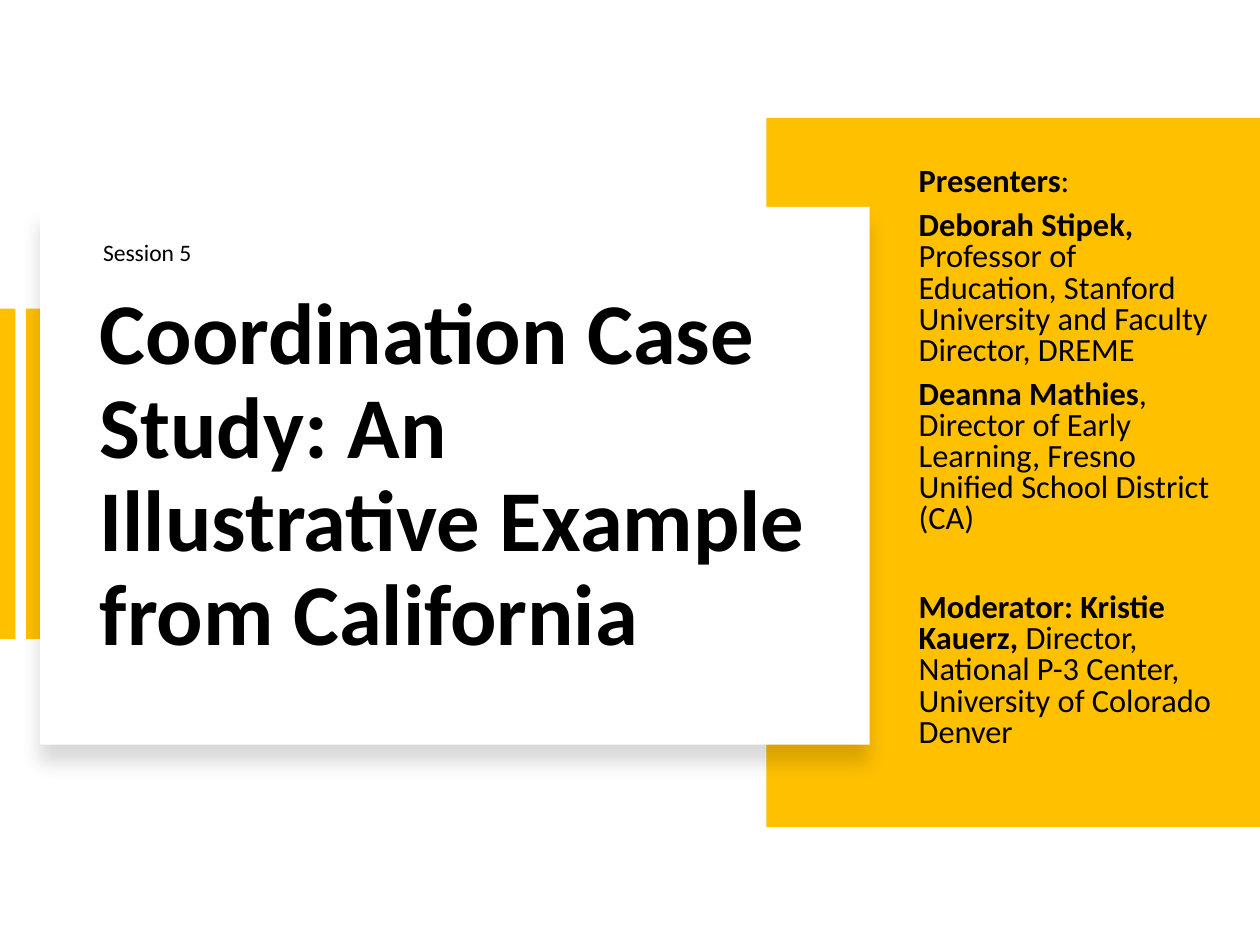
import pptx
import pptx.util
import pptx.dml.color
import pptx.enum.shapes
import pptx.enum.text
import pptx.oxml

Pt = pptx.util.Pt
ANCHOR = pptx.enum.text.MSO_ANCHOR
GOLD, WHITE, BLACK = "FFC000", "FFFFFF", "000000"
FONT = "Calibri"

# Each presenter paragraph: space before, bold part, regular part
PEOPLE = [
    (7.5, "Presenters", ":"),
    (7.5, "Deborah Stipek, ",
     "Professor of Education, Stanford University and Faculty Director, DREME"),
    (7.5, "Deanna Mathies",
     ", Director of Early Learning, Fresno Unified School District (CA)"),
    (33, "Moderator: Kristie Kauerz, ",
     "Director, National P-3 Center, University of Colorado Denver"),
]


def color(value):
    return pptx.dml.color.RGBColor.from_string(value)


def set_attrs(obj, values):
    for name, value in values.items():
        setattr(obj, name, value)


def add_rect(s, x, y, w, h, fill):
    sp = s.shapes.add_shape(pptx.enum.shapes.MSO_SHAPE.RECTANGLE,
                            Pt(x), Pt(y), Pt(w), Pt(h))
    sp.shadow.inherit = False
    sp.fill.solid()
    sp.fill.fore_color.rgb = color(fill)
    sp.line.fill.background()
    return sp


def add_shadow(sp, blur, dist, alpha):
    """Cast a soft black shadow straight down."""
    ns = "http://schemas.openxmlformats.org/drawingml/2006/main"
    effects = sp._element.spPr.find(f"{{{ns}}}effectLst")
    effects.append(pptx.oxml.parse_xml(
        f'<a:outerShdw xmlns:a="{ns}" blurRad="{Pt(blur)}" dist="{Pt(dist)}" '
        f'dir="5400000" algn="t" rotWithShape="0"><a:srgbClr val="{BLACK}">'
        f'<a:alpha val="{alpha * 1000}"/></a:srgbClr></a:outerShdw>'))


def format_frame(sp, anchor, bottom=3, wrap=True):
    tf = sp.text_frame
    set_attrs(tf, {
        "word_wrap": wrap, "vertical_anchor": anchor,
        "auto_size": pptx.enum.text.MSO_AUTO_SIZE.NONE,
        "margin_left": Pt(5), "margin_right": Pt(5),
        "margin_top": Pt(3), "margin_bottom": Pt(bottom)})
    return tf


def add_run(p, text, size, bold=False):
    r = p.add_run()
    r.text = text
    set_attrs(r.font, {"name": FONT, "size": Pt(size), "bold": bold})
    r.font.color.rgb = color(BLACK)


def format_title(s, text):
    sp = s.shapes.title
    set_attrs(sp, {"left": Pt(52), "top": Pt(154),
                   "width": Pt(420), "height": Pt(237)})
    p = format_frame(sp, ANCHOR.MIDDLE).paragraphs[0]
    set_attrs(p, {"alignment": pptx.enum.text.PP_ALIGN.LEFT,
                  "line_spacing": 0.9})
    add_run(p, text, 49.5, True)


def add_people(s):
    sp = s.shapes.add_textbox(Pt(520), Pt(88), Pt(177), Pt(367))
    tf = format_frame(sp, ANCHOR.MIDDLE, bottom=22)
    for i, (before, lead, rest) in enumerate(PEOPLE):
        p = tf.add_paragraph() if i else tf.paragraphs[0]
        set_attrs(p, {"line_spacing": 0.8, "space_before": Pt(before)})
        add_run(p, lead, 18.5, True)
        add_run(p, rest, 18.5)


def add_label(s, text):
    sp = s.shapes.add_textbox(Pt(51.8), Pt(132.5), Pt(65.5), Pt(24))
    tf = format_frame(sp, ANCHOR.TOP, wrap=False)
    set_attrs(tf, {"margin_left": Pt(7.2), "margin_right": Pt(7.2),
                   "margin_top": Pt(3.6)})
    add_run(tf.paragraphs[0], text, 13.5)


def main():
    prs = pptx.Presentation()
    set_attrs(prs, {"slide_width": Pt(720), "slide_height": Pt(540)})
    s = prs.slides.add_slide(prs.slide_layouts[5])

    # Gold bars on the left edge and gold panel on the right
    for x in (0, 15):
        add_rect(s, x, 176.4, 8.8, 188.8, GOLD)
    add_rect(s, 438, 67.4, 282, 405.2, GOLD)

    # White card with its shadow
    card = add_rect(s, 23, 118.2, 474, 307.4, WHITE)
    add_shadow(card, blur=11, dist=10, alpha=15)

    # Bring the title in front of the card
    s.shapes._spTree.append(s.shapes.title._element)
    format_title(s, "Coordination Case Study: An Illustrative Example "
                    "from California")
    add_people(s)
    add_label(s, "Session 5")
    prs.save("out.pptx")


if __name__ == "__main__":
    main()
